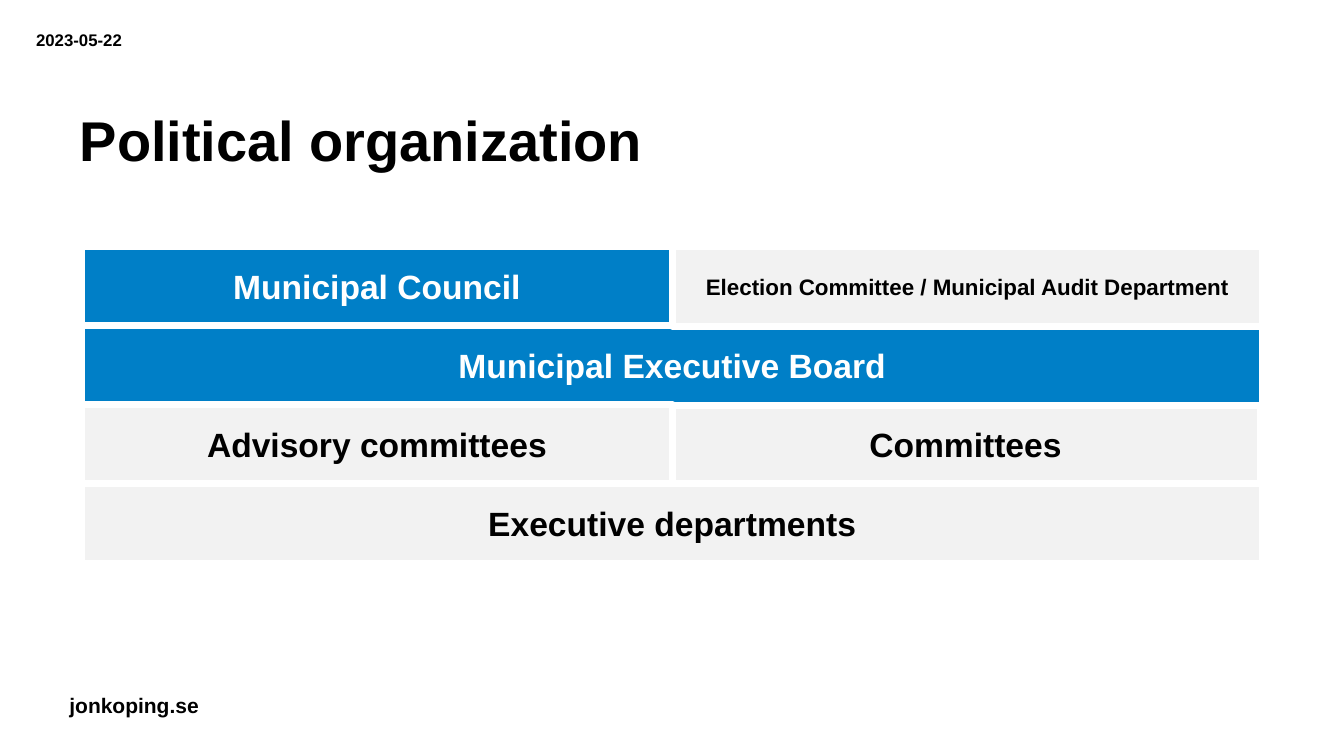
from dataclasses import dataclass

from pptx import Presentation
from pptx.dml.color import RGBColor
from pptx.enum.shapes import MSO_SHAPE
from pptx.enum.text import MSO_ANCHOR, MSO_AUTO_SIZE, PP_ALIGN
from pptx.util import Cm, Pt

RECTANGLE = MSO_SHAPE.RECTANGLE
LEFT, CENTER = PP_ALIGN.LEFT, PP_ALIGN.CENTER
TOP, MIDDLE, BOTTOM = MSO_ANCHOR.TOP, MSO_ANCHOR.MIDDLE, MSO_ANCHOR.BOTTOM
NO_AUTO_SIZE = MSO_AUTO_SIZE.NONE


@dataclass(frozen=True)
class Theme:
    font: str = "Arial"
    black: RGBColor = RGBColor(0x00, 0x00, 0x00)
    white: RGBColor = RGBColor(0xFF, 0xFF, 0xFF)
    blue: RGBColor = RGBColor(0x00, 0x7F, 0xC7)
    gray: RGBColor = RGBColor(0xF2, 0xF2, 0xF2)
    title_size: int = 40
    block_size: int = 24
    detail_size: int = 16
    footer_size: int = 15
    date_size: int = 12
    border: int = 5


def write_text(frame, text, *, font, size, color, align=LEFT, anchor=TOP,
               wrap=True, margins=(0, 0), line_spacing=None):
    frame.auto_size = NO_AUTO_SIZE
    frame.word_wrap = wrap
    frame.vertical_anchor = anchor
    frame.margin_left = frame.margin_right = Cm(margins[0])
    frame.margin_top = frame.margin_bottom = Cm(margins[1])
    frame.text = text
    paragraph = frame.paragraphs[0]
    paragraph.alignment = align
    if line_spacing:
        paragraph.line_spacing = line_spacing
    paragraph.font.name = font
    paragraph.font.size = Pt(size)
    paragraph.font.bold = True
    paragraph.font.color.rgb = color


class OrganizationSlide:
    grid_left, grid_top = 2.06, 6.22
    column_width, row_pitch, row_height = 14.88, 1.99, 2.0

    def __init__(self, presentation, theme):
        self.theme = theme
        self.slide = presentation.slides.add_slide(presentation.slide_layouts[5])

    def title(self, text, left, top, width, height):
        shape = self.slide.shapes.title
        shape.left, shape.top = Cm(left), Cm(top)
        shape.width, shape.height = Cm(width), Cm(height)
        write_text(shape.text_frame, text, font=self.theme.font,
                   size=self.theme.title_size, color=self.theme.black,
                   anchor=BOTTOM, line_spacing=0.9)

    def label(self, text, left, top, width, height, size, **text_format):
        shape = self.slide.shapes.add_textbox(
            Cm(left), Cm(top), Cm(width), Cm(height))
        write_text(shape.text_frame, text, font=self.theme.font, size=size,
                   color=self.theme.black, **text_format)

    def block(self, text, row, column=0, span=1, leading=False, size=None, shift=0):
        shape = self.slide.shapes.add_shape(
            RECTANGLE,
            Cm(self.grid_left + column * self.column_width + shift),
            Cm(self.grid_top + row * self.row_pitch),
            Cm(span * self.column_width), Cm(self.row_height))
        shape.shadow.inherit = False
        shape.fill.solid()
        shape.fill.fore_color.rgb = self.theme.blue if leading else self.theme.gray
        shape.line.color.rgb = self.theme.white
        shape.line.width = Pt(self.theme.border)
        write_text(shape.text_frame, text, font=self.theme.font,
                   size=size or self.theme.block_size,
                   color=self.theme.white if leading else self.theme.black,
                   align=CENTER, anchor=MIDDLE)


def main():
    presentation = Presentation()
    presentation.slide_width, presentation.slide_height = Cm(33.87), Cm(19.05)
    theme = Theme()
    page = OrganizationSlide(presentation, theme)

    page.label("jonkoping.se", 1.5, 17.32, 3.81, 0.89, theme.footer_size,
               wrap=False, margins=(0.25, 0.13))
    page.title("Political organization", 2.01, 1.27, 30.07, 3.1)
    page.label("2023-05-22", 0.91, 0.76, 2.49, 0.51, theme.date_size)

    page.block("Committees", row=2, column=1, shift=-0.05)
    page.block("Municipal Council", row=0, leading=True)
    page.block("Municipal Executive Board", row=1, span=2, leading=True)
    page.block("Election Committee / Municipal Audit Department", row=0,
               column=1, size=theme.detail_size)
    page.block("Advisory committees", row=2)
    page.block("Executive departments", row=3, span=2)

    presentation.save("out.pptx")


if __name__ == "__main__":
    main()
